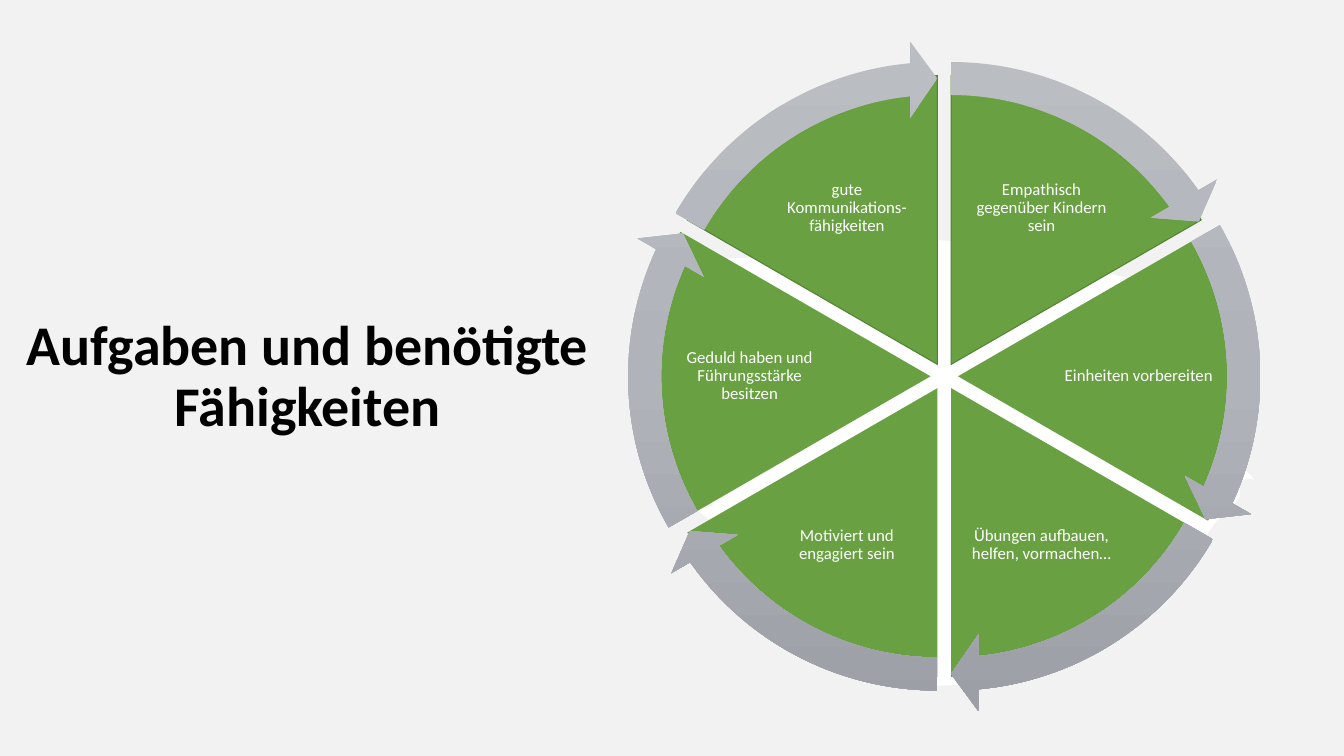
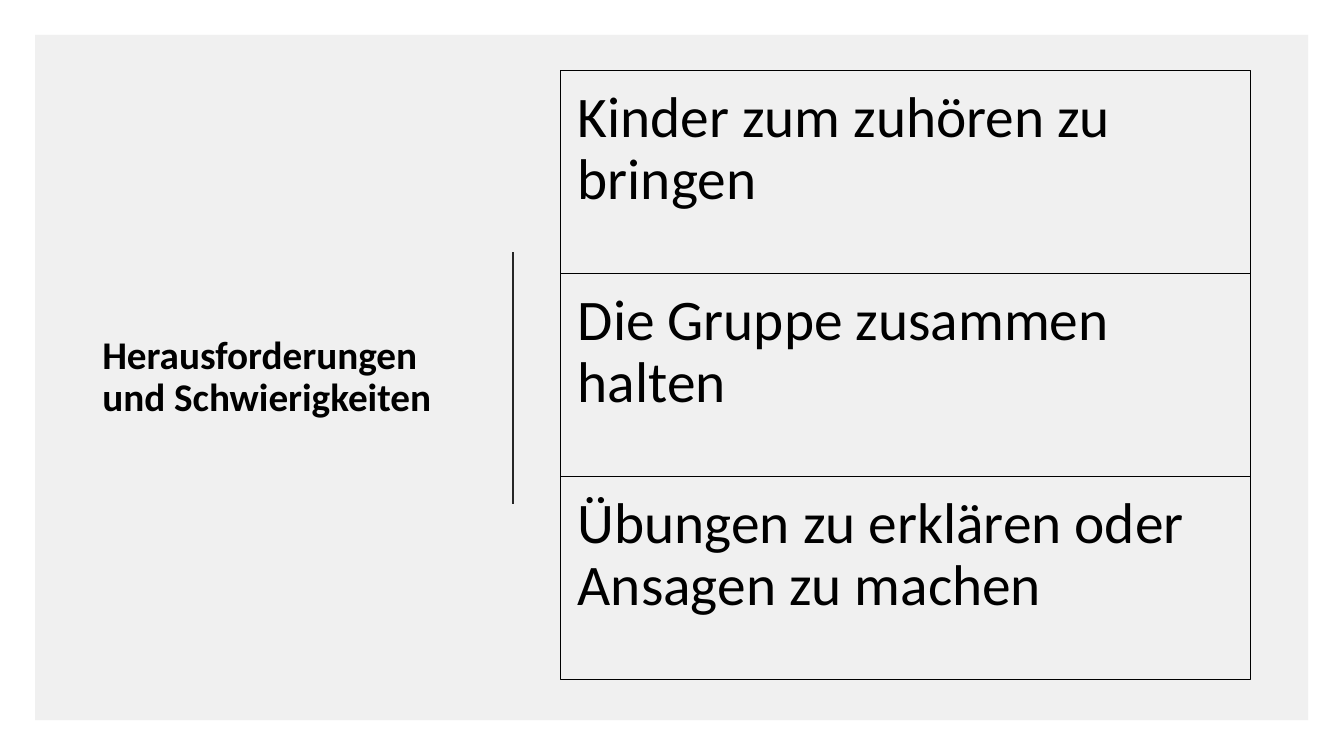
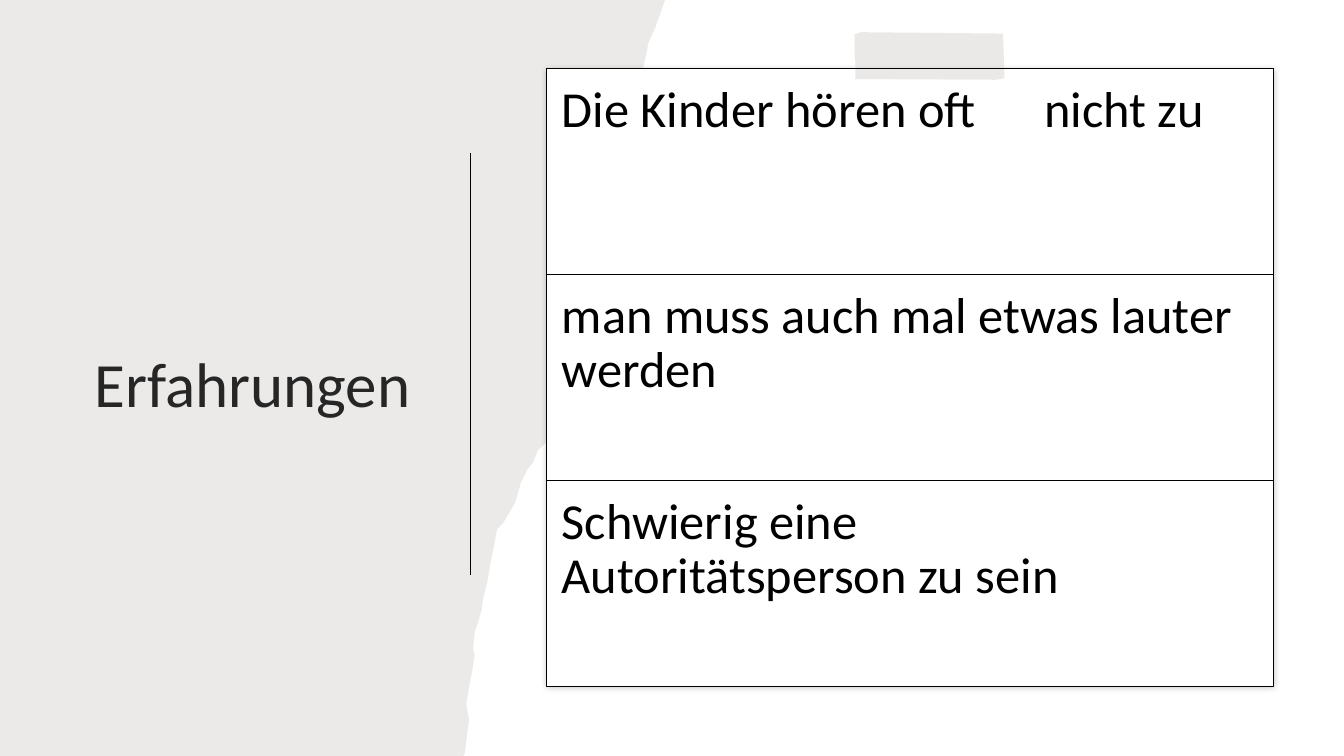
"""Build three slides on tasks, challenges and experiences of coaching children."""
from copy import deepcopy
from dataclasses import dataclass
from math import cos, radians, sin

from lxml import etree
from pptx import Presentation
from pptx.dml.color import RGBColor
from pptx.enum.shapes import MSO_CONNECTOR, MSO_SHAPE
from pptx.enum.text import MSO_ANCHOR, PP_ALIGN
from pptx.oxml.ns import qn
from pptx.shapes.autoshape import Shape
from pptx.slide import Slide
from pptx.util import Pt

LEFT, CENTER = PP_ALIGN.LEFT, PP_ALIGN.CENTER
TOP, MIDDLE, BOTTOM = MSO_ANCHOR.TOP, MSO_ANCHOR.MIDDLE, MSO_ANCHOR.BOTTOM
RECTANGLE, PIE, CIRCULAR_ARROW = MSO_SHAPE.RECTANGLE, MSO_SHAPE.PIE, MSO_SHAPE.CIRCULAR_ARROW
STRAIGHT = MSO_CONNECTOR.STRAIGHT

Points = list[tuple[float, float]]


@dataclass(frozen=True)
class Theme:
    font: str = "Calibri"
    black: str = "000000"
    white: str = "FFFFFF"
    dark: str = "262626"
    panel: str = "E7E6E6"
    paper: str = "82766A"
    tape: str = "D9D4D0"
    slice: str = "68A042"
    slice_edge: str = "548235"
    arrow: tuple[str, str, str] = ("BABDC2", "B0B3BA", "9C9FA6")
    skills_title_size: float = 40
    challenges_title_size: float = 28
    experiences_title_size: float = 45
    challenges_size: float = 41
    experiences_size: float = 36
    label_size: float = 12
    line_spacing: float = 0.9
    border: float = 0.75


@dataclass(frozen=True)
class Box:
    left: float
    top: float
    width: float
    height: float


@dataclass(frozen=True)
class TextStyle:
    size: float
    color: str
    bold: bool = False
    align: PP_ALIGN = LEFT
    anchor: MSO_ANCHOR = MIDDLE
    inset_x: float = 7.2
    inset_y: float = 3.6


@dataclass(frozen=True)
class Slice:
    text: str
    label_width: float = 108
    outlined: bool = False


@dataclass(frozen=True)
class Stack:
    box: Box
    size: float
    inset: float
    rows: tuple[str, ...]
    tab_stop: float = 0


@dataclass(frozen=True)
class Rule:
    x: float
    top: float
    bottom: float
    color: str
    width: float


THEME = Theme()
WIDTH, HEIGHT = 960, 540
WHEEL_X, WHEEL_Y = 674.5, 268.8
SLICE_SIZE, ARROW_SIZE = 412.6, 463
SLICE_SHIFT, LABEL_RADIUS, LABEL_HEIGHT = 9.8, 139, 82
FULL_TURN, SLICE_TURN, FIRST_TURN = 216, 36, 162
ARROW_HEAD = 3.275

SLICES = (
    Slice("Empathisch gegenüber Kindern sein", outlined=True),
    Slice("Einheiten vorbereiten", label_width=113),
    Slice("Übungen aufbauen, helfen, vormachen…"),
    Slice("Motiviert und engagiert sein"),
    Slice("Geduld haben und Führungsstärke besitzen", label_width=113),
    Slice("gute Kommunikations-fähigkeiten", outlined=True),
)
CHALLENGES = Stack(
    Box(400.5, 50.4, 493, 435.3), THEME.challenges_size, 12.2,
    ("Kinder zum zuhören zu bringen", "Die Gruppe zusammen halten",
     "Übungen zu erklären oder Ansagen zu machen"),
)
EXPERIENCES = Stack(
    Box(390.5, 49, 519.5, 441.6), THEME.experiences_size, 10.8,
    ("Die Kinder hören oft\tnicht zu", "man muss auch mal etwas lauter werden",
     "Schwierig eine\vAutoritätsperson zu sein"),
    tab_stop=344.5,
)
FRAME: Points = [(0, 0), (WIDTH, 0), (WIDTH, HEIGHT), (0, HEIGHT)]
BRUSH_HOLE: Points = [
    (546, 158), (558, 166), (535, 164), (562, 171), (542, 171), (559, 183), (491, 186),
    (540, 205), (552, 218), (546, 225), (564, 232), (566, 245), (574, 252), (573, 260),
    (515, 247), (544, 265), (565, 274), (505, 273), (506, 285), (501, 291), (529, 307),
    (516, 316), (518, 339), (509, 349), (494, 351), (510, 361), (493, 361), (523, 384),
    (505, 377), (529, 397), (538, 410), (527, 410), (554, 428), (549, 438), (582, 459),
    (622, 479), (667, 490), (712, 488), (760, 475), (805, 452), (836, 419), (847, 408),
    (855, 392), (870, 371), (878, 366), (886, 354), (885, 343), (896, 342), (890, 336),
    (879, 325), (873, 312), (864, 309), (873, 295), (868, 283), (860, 277), (868, 268),
    (864, 258), (876, 250), (863, 238), (870, 234), (836, 212), (810, 200), (788, 194),
    (803, 181), (778, 179), (731, 176), (664, 171), (608, 166),
]
TORN_PAPER: Points = [
    (0, 0), (475, 0), (468, 20), (463, 31), (462, 37), (459, 50), (456, 59), (449, 71),
    (431, 106), (426, 123), (422, 151), (420, 191), (416, 220), (411, 244), (407, 258),
    (404, 275), (398, 303), (394, 311), (391, 315), (384, 322), (381, 330), (377, 335),
    (372, 345), (368, 359), (361, 371), (359, 374), (355, 378), (353, 389), (350, 404),
    (348, 416), (345, 428), (344, 436), (341, 446), (339, 452), (338, 464), (339, 468),
    (337, 481), (335, 491), (333, 503), (335, 514), (332, 538), (331, 540), (0, 540),
]
TAPE: Points = [
    (610.5, 24.5), (615, 23), (716.5, 24), (717.5, 56), (711, 57), (611, 56.5),
    (611, 46), (610.5, 37),
]


def rgb(color: str) -> RGBColor:
    return RGBColor.from_string(color)


def paint(shape: Shape, fill: str = "", opacity: int = 100,
          line: str = "", line_width: float = THEME.border) -> None:
    shape.shadow.inherit = False
    if fill:
        shape.fill.solid()
        shape.fill.fore_color.rgb = rgb(fill)
        if opacity < 100:
            color = shape._element.spPr.find(qn("a:solidFill"))[0]
            etree.SubElement(color, qn("a:alpha"), val=str(opacity * 1000))
    else:
        shape.fill.background()
    if line:
        shape.line.color.rgb = rgb(line)
        shape.line.width = Pt(line_width)
    else:
        shape.line.fill.background()


def add_shape(slide: Slide, kind: MSO_SHAPE, box: Box) -> Shape:
    return slide.shapes.add_shape(
        kind, Pt(box.left), Pt(box.top), Pt(box.width), Pt(box.height))


def write(shape: Shape, text: str, style: TextStyle) -> None:
    frame = shape.text_frame
    frame.text = text
    frame.word_wrap = True
    frame.vertical_anchor = style.anchor
    frame.margin_left = frame.margin_right = Pt(style.inset_x)
    frame.margin_top = frame.margin_bottom = Pt(style.inset_y)
    for paragraph in frame.paragraphs:
        paragraph.alignment = style.align
        paragraph.line_spacing = THEME.line_spacing
        for run in paragraph.runs:
            run.font.name = THEME.font
            run.font.size = Pt(style.size)
            run.font.bold = style.bold
            run.font.color.rgb = rgb(style.color)


def add_text(slide: Slide, box: Box, text: str, style: TextStyle) -> None:
    shape = slide.shapes.add_textbox(
        Pt(box.left), Pt(box.top), Pt(box.width), Pt(box.height))
    write(shape, text, style)


def add_outline(slide: Slide, *contours: Points) -> Shape:
    builder = None
    for contour in contours:
        first, *rest = [(Pt(x), Pt(y)) for x, y in contour]
        if builder is None:
            builder = slide.shapes.build_freeform(*first)
        else:
            builder.move_to(*first)
        builder.add_line_segments(rest, close=True)
    return builder.convert_to_shape()


def add_rule(slide: Slide, rule: Rule) -> None:
    connector = slide.shapes.add_connector(
        STRAIGHT, Pt(rule.x), Pt(rule.top), Pt(rule.x), Pt(rule.bottom))
    connector.line.color.rgb = rgb(rule.color)
    connector.line.width = Pt(rule.width)
    etree.SubElement(connector._element.spPr, qn("a:effectLst"))


def centered(x: float, y: float, width: float, height: float) -> Box:
    return Box(x - width / 2, y - height / 2, width, height)


def wheel_point(index: int, radius: float) -> tuple[float, float]:
    angle = radians(60 * index - 60)
    return WHEEL_X + radius * cos(angle), WHEEL_Y + radius * sin(angle)


def set_adjustments(shape: Shape, values: tuple[float, ...]) -> None:
    for index, value in enumerate(values):
        shape.adjustments[index] = value


def slice_start(index: int) -> int:
    return (FIRST_TURN + SLICE_TURN * index) % FULL_TURN


def add_slice(slide: Slide, index: int, item: Slice) -> None:
    pie = add_shape(slide, PIE, centered(
        *wheel_point(index, SLICE_SHIFT), SLICE_SIZE, SLICE_SIZE))
    set_adjustments(pie, (slice_start(index), slice_start(index + 1)))
    paint(pie, THEME.slice, line=THEME.slice_edge if item.outlined else "")
    label = centered(*wheel_point(index, LABEL_RADIUS), item.label_width, LABEL_HEIGHT)
    add_text(slide, label, item.text, TextStyle(
        THEME.label_size, THEME.white, align=CENTER, inset_x=1.2, inset_y=1.2))


def add_arrow(slide: Slide, index: int) -> None:
    arrow = add_shape(slide, CIRCULAR_ARROW, centered(
        *wheel_point(index, SLICE_SHIFT), ARROW_SIZE, ARROW_SIZE))
    start = slice_start(index)
    end = (start + SLICE_TURN - ARROW_HEAD) % FULL_TURN
    set_adjustments(arrow, (0.051, ARROW_HEAD, end, start, 0.059))
    paint(arrow)
    arrow.fill.gradient()
    arrow.fill.gradient_angle = 270
    stops = arrow._element.spPr.find(qn("a:gradFill")).find(qn("a:gsLst"))
    middle = deepcopy(stops[0])
    middle.set("pos", "50000")
    stops.insert(1, middle)
    for stop, color in zip(arrow.fill.gradient_stops, THEME.arrow):
        stop.color.rgb = rgb(color)


def add_stack(slide: Slide, stack: Stack) -> None:
    height = stack.box.height / len(stack.rows)
    style = TextStyle(stack.size, THEME.black, anchor=TOP,
                      inset_x=stack.inset, inset_y=stack.inset)
    for index, text in enumerate(stack.rows):
        row = add_shape(slide, RECTANGLE, Box(
            stack.box.left, stack.box.top + index * height, stack.box.width, height))
        paint(row, line=THEME.black)
        write(row, text, style)
        if "\t" in text:
            properties = row.text_frame.paragraphs[0]._p.get_or_add_pPr()
            tabs = etree.SubElement(properties, qn("a:tabLst"))
            etree.SubElement(tabs, qn("a:tab"), pos=str(Pt(stack.tab_stop)), algn="l")


def add_soft_shadow(shape: Shape) -> None:
    effects = shape._element.spPr.find(qn("a:effectLst"))
    shadow = etree.SubElement(
        effects, qn("a:outerShdw"), blurRad=str(Pt(4)), dist=str(Pt(1)),
        dir="3000000", algn="tl", rotWithShape="0")
    color = etree.SubElement(shadow, qn("a:srgbClr"), val=THEME.black)
    etree.SubElement(color, qn("a:alpha"), val="24000")


def build_skills(slide: Slide) -> None:
    paint(add_outline(slide, BRUSH_HOLE, FRAME), THEME.panel, 50)
    add_text(slide, Box(11, 55, 417.5, 430), "Aufgaben und benötigte Fähigkeiten",
             TextStyle(THEME.skills_title_size, THEME.black, bold=True, align=CENTER))
    for index, item in enumerate(SLICES):
        add_slice(slide, index, item)
    for index in range(len(SLICES)):
        add_arrow(slide, index)


def build_challenges(slide: Slide) -> None:
    paint(add_shape(slide, RECTANGLE, Box(25, 25, 909.5, 489.5)), THEME.panel, 60)
    add_text(slide, Box(66, 84, 261, 372), "Herausforderungen und Schwierigkeiten",
             TextStyle(THEME.challenges_title_size, THEME.black, bold=True))
    add_rule(slide, Rule(366.5, 180, 360, THEME.dark, 1.5))
    add_stack(slide, CHALLENGES)


def build_experiences(slide: Slide) -> None:
    paint(add_outline(slide, TORN_PAPER), THEME.paper, 15)
    add_text(slide, Box(31.5, 103.5, 297.5, 201), "Erfahrungen",
             TextStyle(THEME.experiences_title_size, THEME.dark,
                       align=CENTER, anchor=BOTTOM))
    card = add_shape(slide, RECTANGLE, EXPERIENCES.box)
    paint(card, THEME.white)
    add_soft_shadow(card)
    paint(add_outline(slide, TAPE), THEME.tape, 50)
    add_stack(slide, EXPERIENCES)
    add_rule(slide, Rule(336, 109.5, 411, THEME.black, 0.5))


def main() -> None:
    presentation = Presentation()
    presentation.slide_width = Pt(WIDTH)
    presentation.slide_height = Pt(HEIGHT)
    blank = presentation.slide_layouts[6]
    for build in (build_skills, build_challenges, build_experiences):
        build(presentation.slides.add_slide(blank))
    presentation.save("out.pptx")


if __name__ == "__main__":
    main()
